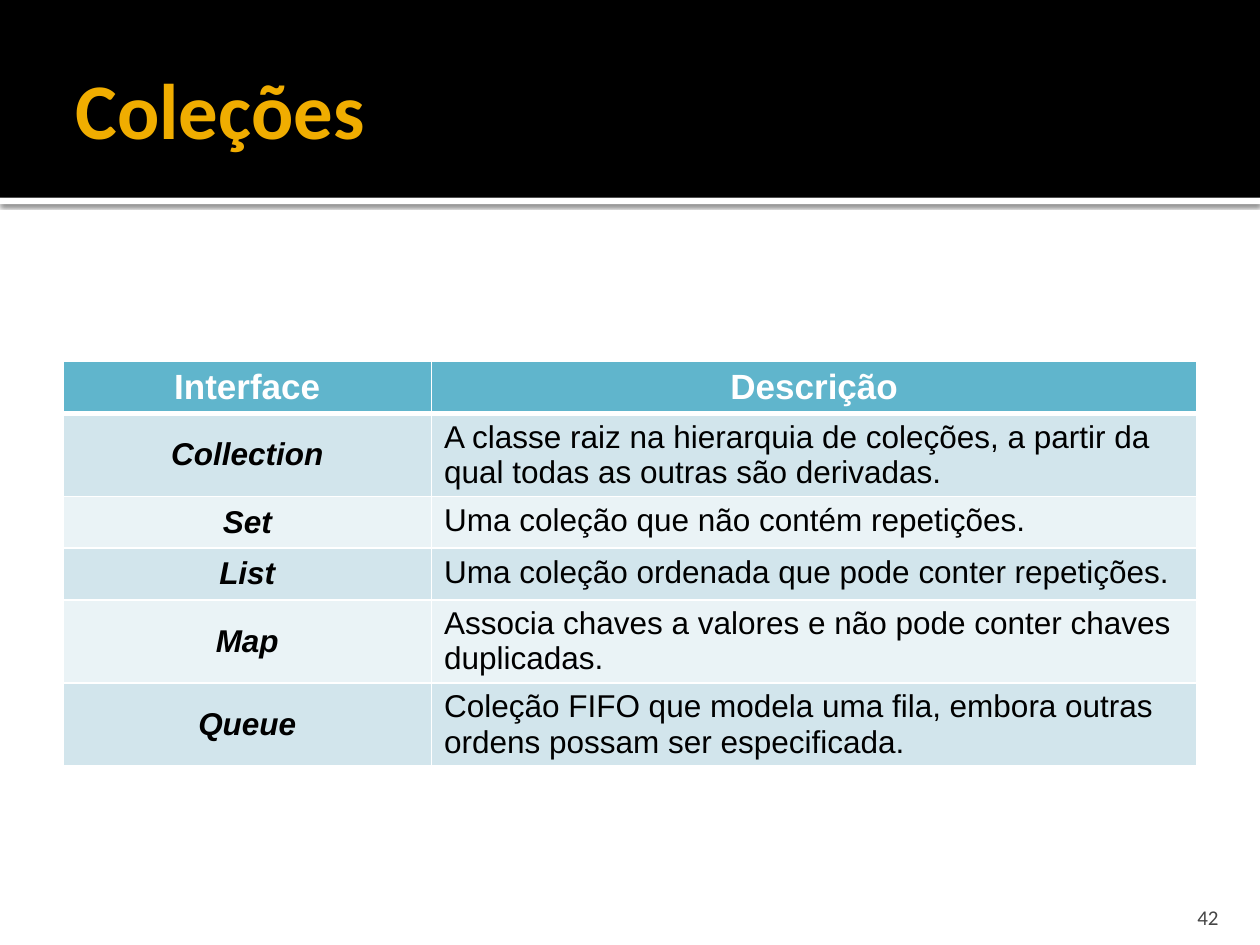
import pptx
import pptx.util
import pptx.dml.color
import pptx.enum.shapes
import pptx.enum.text
import pptx.oxml
import pptx.oxml.ns
from dataclasses import dataclass

Inch = pptx.util.Inches
Align = pptx.enum.text.PP_ALIGN
Anchor = pptx.enum.text.MSO_ANCHOR
WIDE, HIGH = 10, 7.5


@dataclass(frozen=True)
class Theme:
    head: str = "Calibri"
    body: str = "Arial"
    black: str = "000000"
    white: str = "FFFFFF"
    gold: str = "F0AD00"
    gray: str = "454545"
    teal: str = "60B5CC"
    bands: tuple = ("D2E5EC", "EAF3F6")
    title: int = 45
    top: int = 20
    text: int = 18
    note: int = 12


LOOK = Theme()
ROWS = [
    ("Interface", "Descrição"),
    ("Collection", "A classe raiz na hierarquia de coleções, a partir da qual todas as outras são derivadas."),
    ("Set", "Uma coleção que não contém repetições."),
    ("List", "Uma coleção ordenada que pode conter repetições."),
    ("Map", "Associa chaves a valores e não pode conter chaves duplicadas."),
    ("Queue", "Coleção FIFO que modela uma fila, embora outras ordens possam ser especificada."),
]


def tint(code):
    return pptx.dml.color.RGBColor.from_string(code)


def write(frame, text, face, size, color, align, bold=False, slant=False):
    frame.text = text
    par = frame.paragraphs[0]
    par.alignment = align
    font = par.font
    font.name, font.size = face, pptx.util.Pt(size)
    font.bold, font.italic = bold, slant
    font.color.rgb = tint(color)


def inset(frame, left, top, right, low):
    frame.margin_left, frame.margin_top = Inch(left), Inch(top)
    frame.margin_right, frame.margin_bottom = Inch(right), Inch(low)


def block(slide, box, color):
    shape = slide.shapes.add_shape(
        pptx.enum.shapes.MSO_SHAPE.RECTANGLE, *map(Inch, box))
    shape.shadow.inherit = False
    shape.fill.solid()
    shape.fill.fore_color.rgb = tint(color)
    shape.line.fill.background()
    return shape


def shade(shape):
    glow = shape.element.spPr.find(pptx.oxml.ns.qn("a:effectLst"))
    glow.append(pptx.oxml.parse_xml(
        f'<a:outerShdw {pptx.oxml.ns.nsdecls("a")} blurRad="31750" dist="10160" '
        f'dir="5400000" algn="t" rotWithShape="0"><a:srgbClr val="{LOOK.black}">'
        '<a:alpha val="60000"/></a:srgbClr></a:outerShdw>'))


def header(slide, box, text):
    left, top, wide, high = box
    shade(block(slide, (left, top + high, wide, 0.05), LOOK.white))
    block(slide, box, LOOK.black)
    title = slide.shapes.title
    title.element.getparent().append(title.element)
    title.left, title.top = Inch(left + wide * 0.05), Inch(top + 0.17)
    title.width, title.height = Inch(wide * 0.863), Inch(high - 0.2)
    frame = title.text_frame
    frame.auto_size = pptx.enum.text.MSO_AUTO_SIZE.NONE
    frame.vertical_anchor = Anchor.MIDDLE
    inset(frame, 0.1, 0.05, 0.05, 0.05)
    write(frame, text, LOOK.head, LOOK.title, LOOK.gold, Align.LEFT, True)


def edge(cell, sides):
    props = cell._tc.get_or_add_tcPr()
    for side, width in sides.items():
        props.append(pptx.oxml.parse_xml(
            f'<a:ln{side} {pptx.oxml.ns.nsdecls("a")} w="{pptx.util.Pt(width)}">'
            f'<a:solidFill><a:srgbClr val="{LOOK.white}"/></a:solidFill></a:ln{side}>'))


def grid(slide, box, rows, share):
    table = slide.shapes.add_table(len(rows), 2, *map(Inch, box)).table
    table.first_row = table.horz_banding = False
    for col, part in zip(table.columns, (share, 1 - share)):
        col.width = Inch(box[2] * part)
    for r, row in enumerate(rows):
        for c, text in enumerate(row):
            cell = table.cell(r, c)
            top, name = r == 0, c == 0
            edge(cell, {"L": 1, "R": 1, "T": 3 if r == 1 else 1, "B": 3 if top else 1})
            cell.fill.solid()
            cell.fill.fore_color.rgb = tint(LOOK.teal if top else LOOK.bands[(r - 1) % 2])
            cell.vertical_anchor = Anchor.MIDDLE if name and not top else Anchor.TOP
            write(cell.text_frame, text, LOOK.body,
                  LOOK.top if top else LOOK.text,
                  LOOK.white if top else LOOK.black,
                  Align.CENTER if top or name else Align.LEFT,
                  top or name, name and not top)


def number(slide, box, text):
    frame = slide.shapes.add_textbox(*map(Inch, box)).text_frame
    frame.word_wrap = True
    frame.vertical_anchor = Anchor.BOTTOM
    inset(frame, 0.1, 0.05, 0.1, 0)
    write(frame, text, LOOK.head, LOOK.note, LOOK.gray, Align.RIGHT)


def main():
    deck = pptx.Presentation()
    deck.slide_width, deck.slide_height = Inch(WIDE), Inch(HIGH)
    slide = deck.slides.add_slide(deck.slide_layouts[5])
    header(slide, (0, 0, WIDE, 1.57), "Coleções")
    grid(slide, (WIDE * 0.05, 2.87, WIDE * 0.9, 0.41 * len(ROWS)), ROWS, 0.325)
    number(slide, (WIDE * 0.897, 7.08, WIDE * 0.08, HIGH * 0.04), "42")
    deck.save("out.pptx")


if __name__ == "__main__":
    main()
